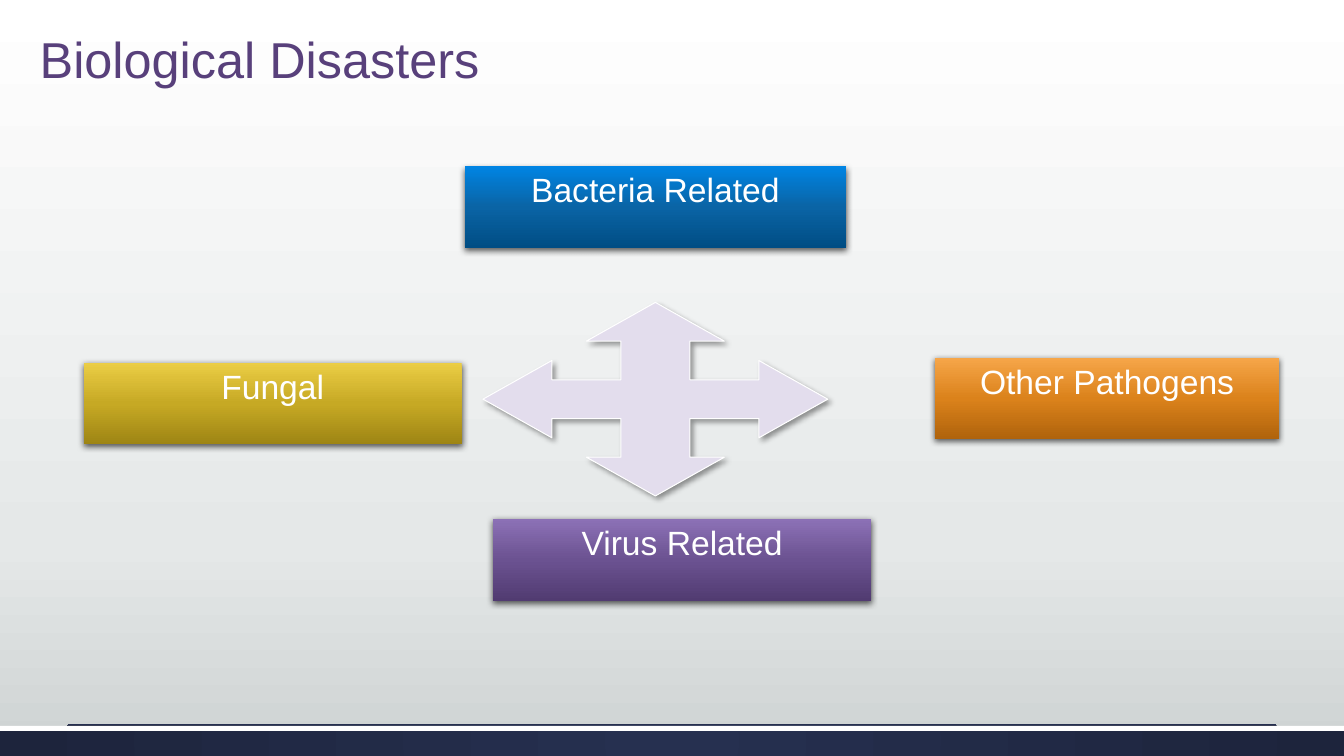
import pptx
import pptx.util
import pptx.oxml
import pptx.oxml.ns
from pptx.dml.color import RGBColor
from pptx.enum.shapes import MSO_CONNECTOR, MSO_SHAPE
from pptx.enum.text import MSO_ANCHOR, PP_ALIGN

Inches, Pt, qn = pptx.util.Inches, pptx.util.Pt, pptx.oxml.ns.qn

SIZE = (13.33, 7.5)
TITLE = ("Biological Disasters", (-0.83, 0.28, 6.81, 0.59))
BOX_H = 0.81
BOXES = [  # text, left, top, width, colour name
    ("Fungal", 0.83, 3.6, 3.75, "gold"),
    ("Virus Related", 4.89, 5.15, 3.75, "violet"),
    ("Other Pathogens", 9.27, 3.55, 3.42, "orange"),
    ("Bacteria Related", 4.61, 1.65, 3.78, "blue"),
]
ARROW = (4.79, 3, 3.42, 1.92)
ARM = [(5, 0), (3, 2), (4, 2), (4, 4), (2, 4), (2, 3)]  # on a 10 by 10 grid
BAND_TOP = 7.2
RULE = (0.67, 12.66)

THEME = {
    "font": "Arial", "title_size": 36, "box_size": 24,
    "title": "58407B", "white": "FFFFFF", "arrow": "E3DDED", "rule": "263050",
    "back": [(0, "FFFFFF"), (72, "E5E8E8"), (100, "CDD2D2")],
    "band": [(0, "263050"), (100, "1D243C")],
    "gold": [(0, "EBCD45"), (50, "C6A924"), (100, "9E8514")],
    "violet": [(0, "8C71B6"), (50, "6B5291"), (100, "513B71")],
    "orange": [(0, "F6A649"), (50, "DB821B"), (100, "AF630C")],
    "blue": [(0, "0084E3"), (50, "0A64A5"), (100, "004D84")],
    "box_shade": {"alpha": 63, "blur": 4.5, "dist": 1.5, "angle": 90},
    "arrow_shade": {"alpha": 40, "blur": 4, "dist": 3, "angle": 45},
}
NS = pptx.oxml.ns.nsdecls("a")


def color(name):
    return RGBColor.from_string(THEME[name])


def blend(fill, root, name, round_=False):
    """Fill with the theme's gradient, downward or from the centre out."""
    fill.solid()
    stops = "".join(f'<a:gs pos="{at * 1000}"><a:srgbClr val="{rgb}"/></a:gs>'
                    for at, rgb in THEME[name])
    way = '<a:lin ang="5400000" scaled="0"/>'
    if round_:
        sides = " ".join(f'{side}="50000"' for side in "ltrb")
        way = f'<a:path path="circle"><a:fillToRect {sides}/></a:path>'
    old = root.find(qn("a:solidFill"))
    root.replace(old, pptx.oxml.parse_xml(
        f'<a:gradFill {NS} rotWithShape="1"><a:gsLst>{stops}</a:gsLst>{way}</a:gradFill>'))


def shade(shape, alpha, blur, dist, angle):
    shape.shadow.inherit = False
    shape._element.spPr.find(qn("a:effectLst")).append(pptx.oxml.parse_xml(
        f'<a:outerShdw {NS} blurRad="{Pt(blur)}" dist="{Pt(dist)}" dir="{angle * 60000}" '
        f'rotWithShape="0"><a:srgbClr val="000000"><a:alpha val="{alpha * 1000}"/>'
        '</a:srgbClr></a:outerShdw>'))


def rect(slide, *place):
    shape = slide.shapes.add_shape(MSO_SHAPE.RECTANGLE, *map(Inches, place))
    shape.line.fill.background()
    shape.shadow.inherit = False
    return shape


def write(shape, text, size, ink, anchor, top=0):
    frame = shape.text_frame
    look = {"word_wrap": True, "vertical_anchor": anchor, "margin_left": 0,
            "margin_right": 0, "margin_top": Inches(top), "margin_bottom": 0}
    for key, value in look.items():
        setattr(frame, key, value)
    para = frame.paragraphs[0]
    para.alignment = PP_ALIGN.CENTER
    run = para.add_run()
    run.text = text
    for key, value in {"name": THEME["font"], "size": Pt(THEME[size])}.items():
        setattr(run.font, key, value)
    run.font.color.rgb = color(ink)


def footer(slide):
    width, height = SIZE
    band = rect(slide, 0, BAND_TOP, width, height - BAND_TOP)
    blend(band.fill, band._element.spPr, "band", round_=True)
    strip = rect(slide, 0, BAND_TOP, width, 0.05)
    strip.fill.solid()
    strip.fill.fore_color.rgb = color("white")
    left, right = map(Inches, RULE)
    y = Inches(BAND_TOP - 0.01)
    rule = slide.shapes.add_connector(MSO_CONNECTOR.STRAIGHT, left, y, right, y)
    rule.line.width = Pt(0.5)
    rule.line.color.rgb = color("rule")
    rule._element.spPr.append(pptx.oxml.parse_xml(f"<a:effectLst {NS}/>"))


def arrow(slide):
    """Turn one arm four times to make the four-way arrow."""
    left, top, width, height = ARROW
    points, arm = [], ARM
    for _ in range(4):
        points += arm
        arm = [(y, 10 - x) for x, y in arm]
    path = slide.shapes.build_freeform(
        *points[0], scale=(Inches(width / 10), Inches(height / 10)))
    path.add_line_segments(points[1:], close=True)
    shape = path.convert_to_shape(Inches(left), Inches(top))
    shape.fill.solid()
    shape.fill.fore_color.rgb = color("arrow")
    shape.line.color.rgb = color("white")
    shape.line.width = Pt(0.75)
    shade(shape, **THEME["arrow_shade"])


def main():
    deck = pptx.Presentation()
    deck.slide_width, deck.slide_height = map(Inches, SIZE)
    slide = deck.slides.add_slide(deck.slide_layouts[6])
    fill = slide.background.fill
    fill.solid()
    blend(fill, slide._element.find(".//" + qn("p:bgPr")), "back")
    footer(slide)
    arrow(slide)
    text, place = TITLE
    title = slide.shapes.add_textbox(*map(Inches, place))
    write(title, text, "title_size", "title", MSO_ANCHOR.MIDDLE)
    for text, left, top, width, name in BOXES:
        box = rect(slide, left, top, width, BOX_H)
        blend(box.fill, box._element.spPr, name)
        shade(box, **THEME["box_shade"])
        write(box, text, "box_size", "white", MSO_ANCHOR.TOP, top=0.03)
    deck.save("out.pptx")


if __name__ == "__main__":
    main()
